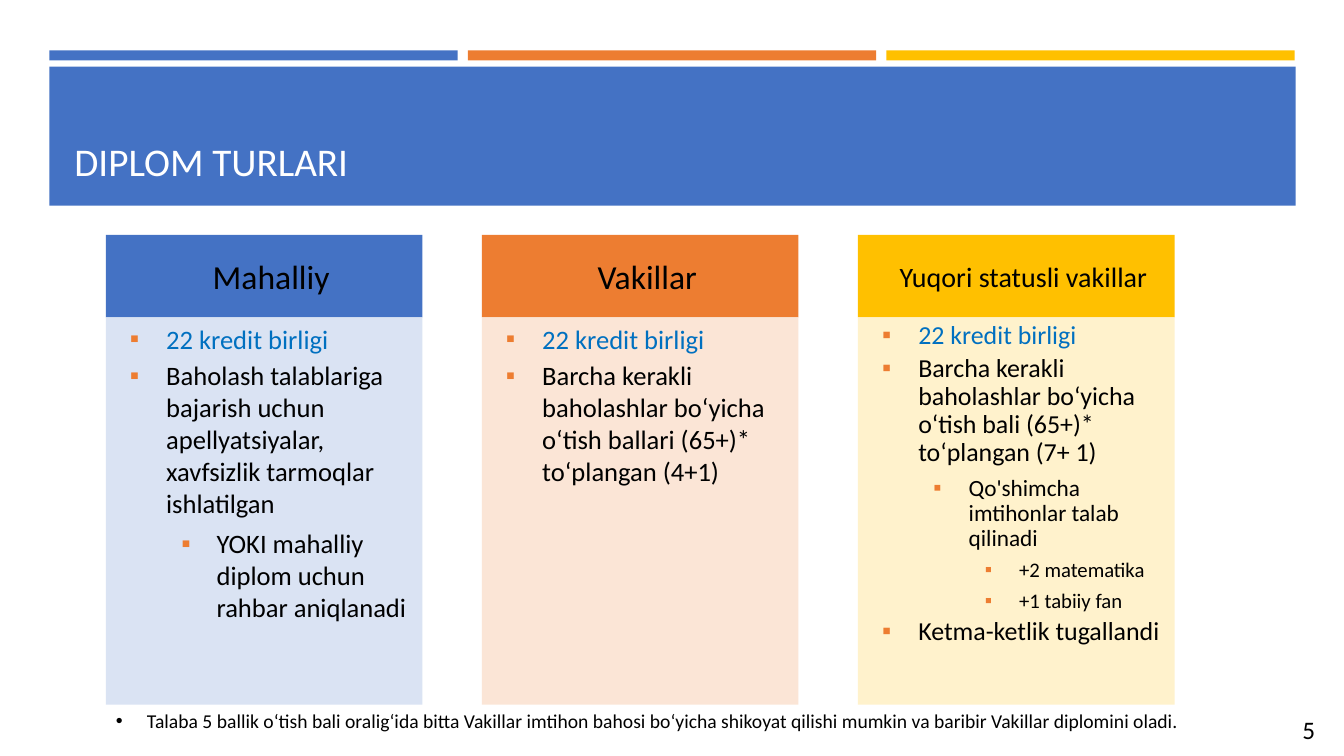
from lxml import etree
from pptx import Presentation
from pptx.dml.color import RGBColor
from pptx.enum.shapes import MSO_SHAPE as Shape
from pptx.enum.text import MSO_ANCHOR as Anchor, PP_ALIGN as Align
from pptx.oxml.ns import qn
from pptx.util import Inches, Pt

BLUE = RGBColor(0x44, 0x72, 0xC4)
ORANGE = RGBColor(0xED, 0x7D, 0x31)
GOLD = RGBColor(0xFF, 0xC0, 0x00)
PALE_BLUE = RGBColor(0xDA, 0xE3, 0xF3)
PALE_ORANGE = RGBColor(0xFB, 0xE5, 0xD6)
PALE_GOLD = RGBColor(0xFF, 0xF2, 0xCC)
LINK_BLUE = RGBColor(0x00, 0x70, 0xC0)
BLACK = RGBColor(0, 0, 0)
WHITE = RGBColor(0xFF, 0xFF, 0xFF)

SLIDE_WIDTH, SLIDE_HEIGHT = 13.33, 7.5
BAND_LEFT, BAND_WIDTH = 0.49, 12.36
STRIPE_WIDTH, STRIPE_STEP = 4.05, 4.15
CARD_LEFT, CARD_WIDTH, CARD_STEP = 1.05, 3.14, 3.73
HEADER_TOP, BODY_TOP, BODY_HEIGHT = 2.33, 3.15, 3.84
HANGING = (0.36, 0.35, 0.34)  # by outline level
SPACE_BEFORE = (3.6, 6, 6)

presentation = Presentation()
presentation.slide_width = Inches(SLIDE_WIDTH)
presentation.slide_height = Inches(SLIDE_HEIGHT)
slide = presentation.slides.add_slide(presentation.slide_layouts[6])


def add_box(left, top, width, height, fill=None):
    """Add a filled rectangle, or a text box when no fill is given."""
    place = [Inches(length) for length in (left, top, width, height)]
    if fill is None:
        return slide.shapes.add_textbox(*place)
    shape = slide.shapes.add_shape(Shape.RECTANGLE, *place)
    shape.shadow.inherit = False
    shape.fill.solid()
    shape.fill.fore_color.rgb = fill
    shape.line.fill.background()
    return shape


def write(shape, text, size, color=BLACK, align=Align.LEFT, anchor=Anchor.TOP, level=0,
          indent=0, hanging=0, bullet=None, bullet_color=BLACK, before=0, spacing=None):
    """Append one paragraph, using the empty first one if there is one."""
    frame = shape.text_frame
    frame.word_wrap = True
    frame.vertical_anchor = anchor
    first = not frame.text
    paragraph = frame.paragraphs[0] if first else frame.add_paragraph()
    paragraph.level = level
    properties = paragraph._p.get_or_add_pPr()
    properties.set("marL", str(Inches(indent)))
    properties.set("indent", str(Inches(-hanging)))
    if bullet:
        tint = etree.SubElement(properties, qn("a:buClr"))
        etree.SubElement(tint, qn("a:srgbClr"), val=str(bullet_color))
        etree.SubElement(properties, qn("a:buFont"), typeface="Arial")
        etree.SubElement(properties, qn("a:buChar"), char=bullet)
    paragraph.alignment = align
    paragraph.space_before = Pt(0 if first else before)
    if spacing:
        paragraph.line_spacing = spacing
    run = paragraph.add_run()
    run.text = text
    run.font.name = "Calibri"
    run.font.size = Pt(size)
    run.font.color.rgb = color


for column, color in enumerate((BLUE, ORANGE, GOLD)):
    add_box(BAND_LEFT + column * STRIPE_STEP, 0.5, STRIPE_WIDTH, 0.1, color)
add_box(BAND_LEFT, 0.66, BAND_WIDTH, 1.38, BLUE)
title = add_box(0.64, 0.8, 12.06, 1.08)
write(title, "DIPLOM TURLARI", 28, WHITE, anchor=Anchor.BOTTOM)

# Each card: heading, heading size, colours, line spacing, (level, size, text) items
cards = [
    ("Mahalliy", 24, BLUE, PALE_BLUE, None, [
        (0, 19, "22 kredit birligi"),
        (0, 19, "Baholash talablariga bajarish uchun apellyatsiyalar, "
                "xavfsizlik tarmoqlar ishlatilgan"),
        (1, 19, "YOKI mahalliy diplom uchun rahbar aniqlanadi"),
    ]),
    ("Vakillar", 24, ORANGE, PALE_ORANGE, None, [
        (0, 19, "22 kredit birligi"),
        (0, 19, "Barcha kerakli baholashlar boʻyicha oʻtish ballari (65+)* "
                "toʻplangan (4+1)"),
    ]),
    ("Yuqori statusli vakillar", 20, GOLD, PALE_GOLD, 0.9, [
        (0, 18.5, "22 kredit birligi"),
        (0, 18.5, "Barcha kerakli baholashlar boʻyicha oʻtish bali (65+)* "
                  "toʻplangan (7+ 1)"),
        (1, 16.6, "Qo'shimcha imtihonlar talab qilinadi"),
        (2, 14.8, "+2 matematika"),
        (2, 14.8, "+1 tabiiy fan"),
        (0, 18.5, "Ketma-ketlik tugallandi"),
    ]),
]
for column, (heading, heading_size, color, pale, spacing, items) in enumerate(cards):
    left = CARD_LEFT + column * CARD_STEP
    header = add_box(left, HEADER_TOP, CARD_WIDTH, BODY_TOP - HEADER_TOP, color)
    write(header, heading, heading_size, align=Align.CENTER, anchor=Anchor.MIDDLE, indent=0.14)
    body = add_box(left, BODY_TOP, CARD_WIDTH, BODY_HEIGHT, pale)
    for row, (level, size, text) in enumerate(items):
        write(body, text, size, BLACK if row else LINK_BLUE, level=level,
              indent=0.5 * (level + 1), hanging=HANGING[level], bullet="▪",
              bullet_color=ORANGE, before=SPACE_BEFORE[level], spacing=spacing)

footnote = add_box(CARD_LEFT, 6.98, 10.76, 0.52)
write(footnote, "Talaba 5 ballik oʻtish bali oraligʻida bitta Vakillar imtihon bahosi "
      "boʻyicha shikoyat qilishi mumkin va baribir Vakillar diplomini oladi.",
      14, indent=0.31, hanging=0.31, bullet="•")
page_number = add_box(SLIDE_WIDTH - 0.7, 7.04, 0.7, 0.4)
write(page_number, "5", 18, align=Align.CENTER)

presentation.save("out.pptx")
